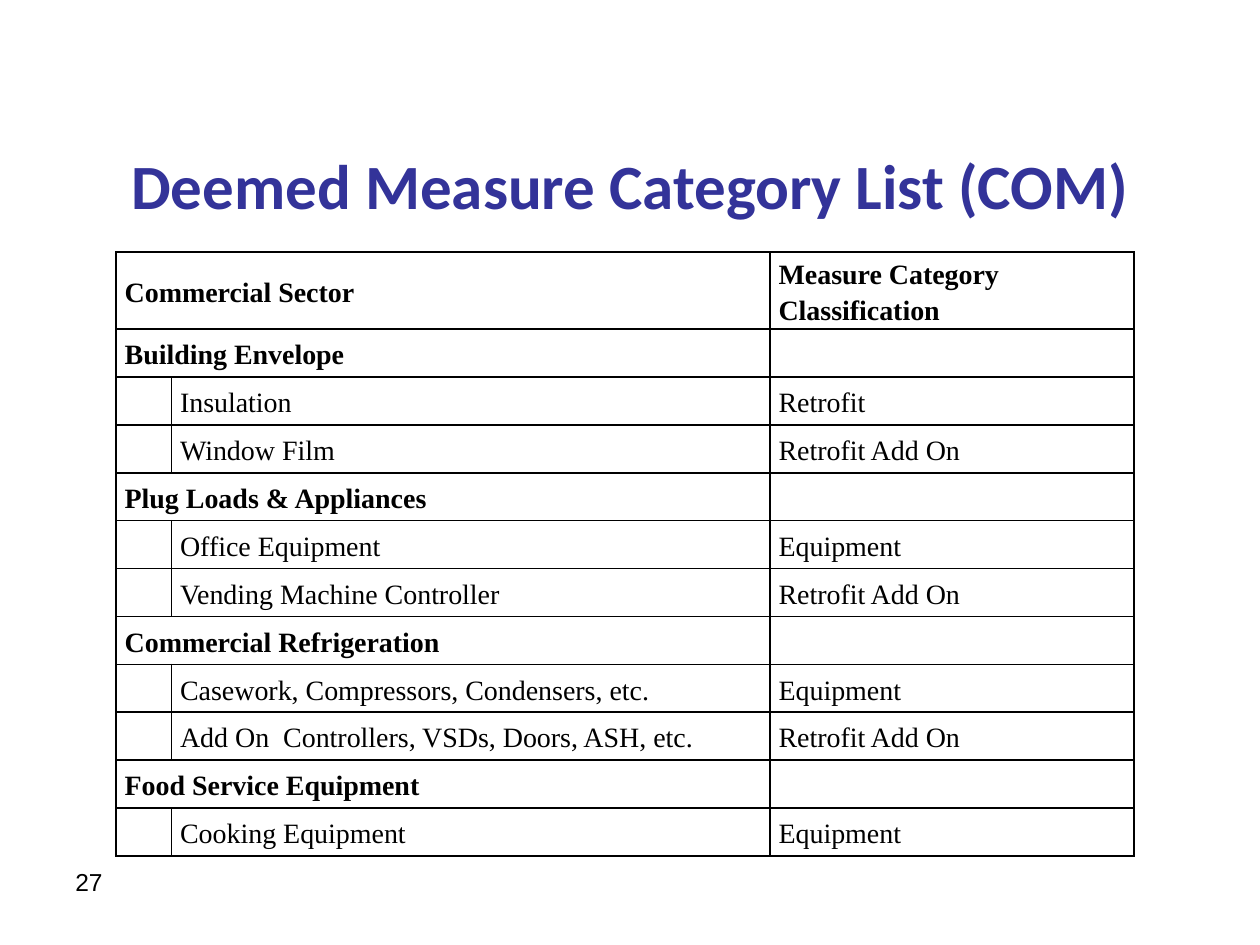
"""Build the commercial deemed measure category slide."""
from lxml import etree
from pptx import Presentation
from pptx import util as u
from pptx.dml.color import RGBColor
from pptx.enum import text
from pptx.oxml.ns import qn


def write(frame, words, size=16, name="Times New Roman", color="000000",
          bold=False, align=None, spacing=None):
    para = frame.paragraphs[0]
    para.alignment = align
    para.line_spacing = spacing
    span = para.add_run() if words else para
    if words:
        span.text = words
    font = span.font
    font.size, font.name, font.bold = u.Pt(size), name, bold
    font.color.rgb = RGBColor.from_string(color)


def outline(cell, color="000000", width=1):
    properties = cell._tc.get_or_add_tcPr()
    for position, side in enumerate(("lnL", "lnR", "lnT", "lnB")):
        line = etree.Element(qn(f"a:{side}"), w=str(u.Pt(width)))
        fill = etree.SubElement(line, qn("a:solidFill"))
        etree.SubElement(fill, qn("a:srgbClr"), val=color)
        properties.insert(position, line)


deck = Presentation()
deck.slide_width, deck.slide_height = u.Inches(10), u.Inches(7.5)
page = deck.slides.add_slide(deck.slide_layouts[5])

title = page.shapes.title
title.left, title.top = u.Inches(0.5), u.Inches(0.92)
title.width, title.height = u.Inches(9), u.Inches(1.08)
title.text_frame.vertical_anchor = text.MSO_ANCHOR.MIDDLE
write(title.text_frame, "Deemed Measure Category List (COM)", size=36,
      name="Calibri", color="333399", bold=True, align=text.PP_ALIGN.CENTER)

number = page.shapes.add_textbox(u.Inches(0.5), u.Inches(6.83), u.Inches(1.83), u.Inches(0.52))
number.text_frame.word_wrap = True
write(number.text_frame, "27", size=14, name="Arial")

sectors = {
    "Building Envelope": [("Insulation", "Retrofit"), ("Window Film", "Retrofit Add On")],
    "Plug Loads & Appliances": [
        ("Office Equipment", "Equipment"),
        ("Vending Machine Controller", "Retrofit Add On"),
    ],
    "Commercial Refrigeration": [
        ("Casework, Compressors, Condensers, etc.", "Equipment"),
        ("Add On  Controllers, VSDs, Doors, ASH, etc.", "Retrofit Add On"),
    ],
    "Food Service Equipment": [("Cooking Equipment", "Equipment")],
}
rows = [("Commercial Sector", "", "Measure Category Classification")]
for sector, measures in sectors.items():
    rows.append((sector, "", ""))
    rows += [("", measure, category) for measure, category in measures]

table = page.shapes.add_table(len(rows), 3, u.Inches(0.92), u.Inches(2),
                              u.Inches(8.08), u.Inches(4.75)).table
table.first_row = table.horz_banding = False
for column, width in zip(table.columns, (0.44, 4.75, 2.89)):
    column.width = u.Inches(width)

for index, row in enumerate(rows):
    table.rows[index].height = u.Inches(0.38 if index else 0.57)
    heading = bool(row[0])
    if heading:
        table.cell(index, 0).merge(table.cell(index, 1))
    for position, words in enumerate(row):
        cell = table.cell(index, position)
        cell.fill.background()
        cell.vertical_anchor = text.MSO_ANCHOR.MIDDLE
        cell.margin_left = cell.margin_right = u.Inches(0.07)
        cell.margin_top = cell.margin_bottom = 0
        outline(cell)
        write(cell.text_frame, words, bold=heading, spacing=1.15)

deck.save("out.pptx")
